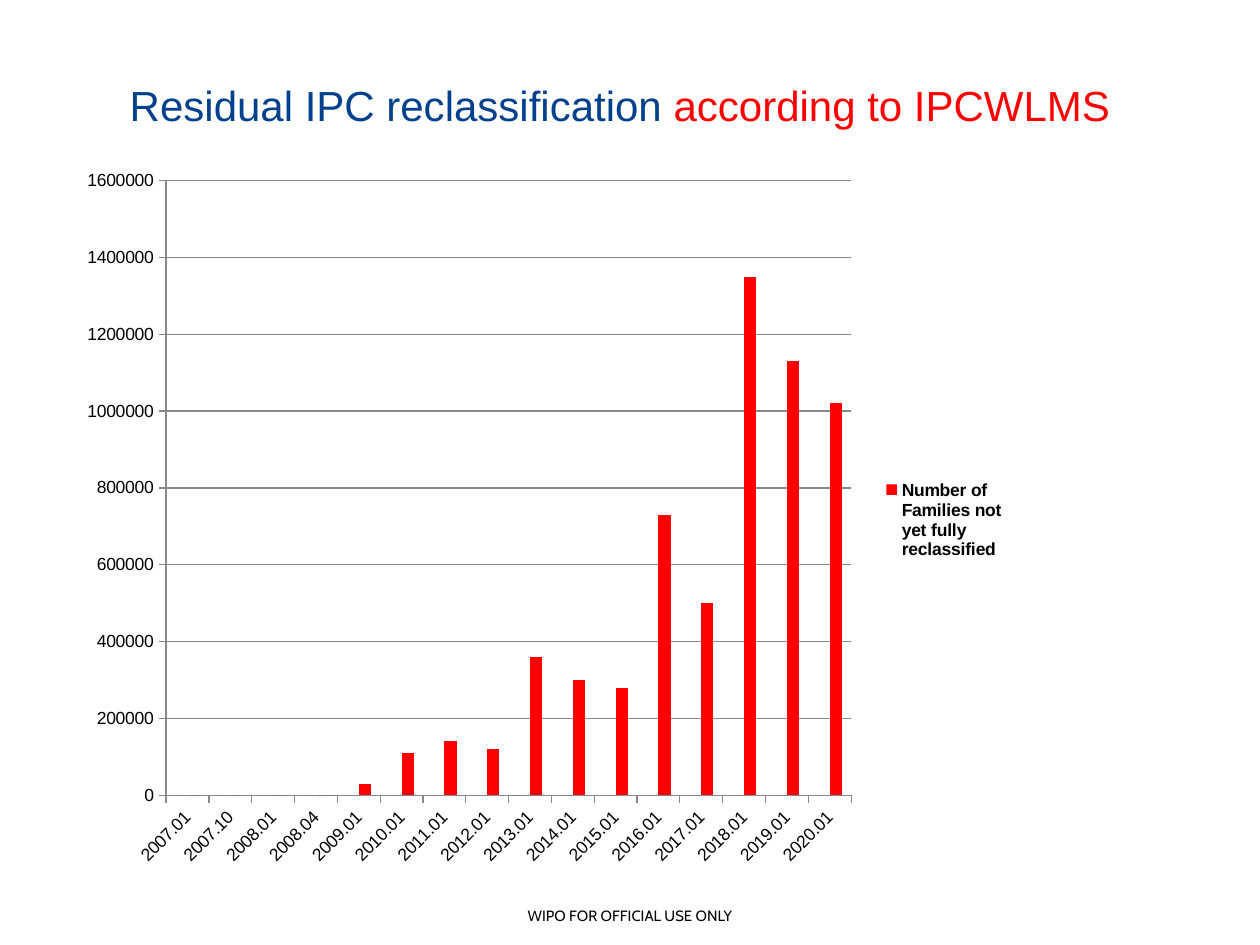
from typing import NamedTuple, Optional

from lxml import etree
from pptx import Presentation
from pptx.chart.data import CategoryChartData
from pptx.dml.color import RGBColor
from pptx.enum import chart as ch, text as t
from pptx.oxml.ns import qn
from pptx.util import Inches, Pt

GREY, BLACK, RED, BLUE = "888888", "000000", "FF0000", "00408C"


class Series(NamedTuple):
    name: str
    values: list[Optional[int]]
    color: str


EDITIONS = ["2007.01", "2007.10", "2008.01", "2008.04"] + [f"{y}.01" for y in range(2009, 2021)]
SERIES = [
    Series("Series 1", [0] * 15 + [None], "48A8B0"),
    Series("Number of Families not yet fully reclassified",
           [0, 0, 0, 0, 30000, 110000, 140000, 120000, 360000, 300000, 280000,
            730000, 500000, 1350000, 1130000, 1020000], RED),
]


def rgb(value: str) -> RGBColor:
    return RGBColor.from_string(value)


def set_font(font, color: str = BLACK, **values) -> None:
    for name, value in values.items():
        setattr(font, name, value)
    font.color.rgb = rgb(color)


def set_line(line) -> None:
    line.color.rgb = rgb(GREY)
    line.width = Pt(0.75)


def place(sp, left: float, top: float, width: float, height: float) -> None:
    sp.left, sp.top, sp.width, sp.height = map(Inches, (left, top, width, height))


def manual_layout(inner: bool, **box: float):
    """Return a c:layout element; box holds x, y, w, h as fractions of the chart."""
    layout = etree.Element(qn("c:layout"))
    manual = etree.SubElement(layout, qn("c:manualLayout"))
    modes = {"layoutTarget": "inner"} if inner else {}
    modes |= {"xMode": "edge", "yMode": "edge"}
    for tag, value in (modes | box).items():
        etree.SubElement(manual, qn(f"c:{tag}")).set("val", str(value))
    return layout


def add_title(slide) -> None:
    sp = slide.shapes.title
    place(sp, 0.42, 0.21, 9, 1.25)
    tf = sp.text_frame
    tf.vertical_anchor = t.MSO_ANCHOR.MIDDLE
    p = tf.paragraphs[0]
    p.alignment = t.PP_ALIGN.CENTER
    for words, color in (("Residual IPC reclassification ", BLUE), ("according to IPCWLMS", RED)):
        r = p.add_run()
        r.text = words
        set_font(r.font, color, name="Arial", size=Pt(24))


def add_footer(slide) -> None:
    sp = slide.shapes.add_textbox(*map(Inches, (0, 7.15, 10, 0.24)))
    tf = sp.text_frame
    tf.word_wrap = True
    p = tf.paragraphs[0]
    p.alignment = t.PP_ALIGN.CENTER
    r = p.add_run()
    r.text = "WIPO FOR OFFICIAL USE ONLY"
    set_font(r.font, name="Cabin", size=Pt(8.5))


def format_legend(chart) -> None:
    chart.has_legend = True
    legend = chart.legend
    legend.position = ch.XL_LEGEND_POSITION.RIGHT
    legend.include_in_layout = False
    set_font(legend.font, name="Arial", size=Pt(10), bold=True)
    root = chart.element.find(f".//{qn('c:legend')}")
    for old in root.findall(qn("c:layout")):
        root.remove(old)
    entry = etree.Element(qn("c:legendEntry"))
    for tag, value in (("idx", "0"), ("delete", "1")):
        etree.SubElement(entry, qn(f"c:{tag}")).set("val", value)
    position = root.find(qn("c:legendPos"))
    position.addnext(entry)
    entry.addnext(manual_layout(False, x=0.844, y=0.43, w=0.15, h=0.14))


def add_chart(slide) -> None:
    data = CategoryChartData()
    data.categories = EDITIONS
    for s in SERIES:
        data.add_series(s.name, s.values)
    chart = slide.shapes.add_chart(ch.XL_CHART_TYPE.COLUMN_CLUSTERED,
                                   *map(Inches, (0.59, 1.31, 7.51, 5.64)), data).chart
    chart.has_title = False
    set_font(chart.font, name="Arial", size=Pt(10))

    plot = chart.plots[0]
    plot.gap_width, plot.overlap, plot.vary_by_categories = 150, 0, False
    for series, s in zip(plot.series, SERIES):
        series.format.fill.solid()
        series.format.fill.fore_color.rgb = rgb(s.color)

    for axis in (chart.category_axis, chart.value_axis):
        axis.major_tick_mark = ch.XL_TICK_MARK.OUTSIDE
        set_font(axis.tick_labels.font, name="Arial", size=Pt(10))
        set_line(axis.format.line)
    labels = chart.element.find(f".//{qn('c:catAx')}/{qn('c:txPr')}/{qn('a:bodyPr')}")
    labels.set("rot", "-2700000")

    values = chart.value_axis
    values.minimum_scale, values.maximum_scale, values.major_unit = 0, 1600000, 200000
    values.tick_labels.number_format = "0"
    values.tick_labels.number_format_is_linked = False
    values.has_major_gridlines = True
    set_line(values.major_gridlines.format.line)

    area = chart.element.find(f".//{qn('c:plotArea')}")
    for old in area.findall(qn("c:layout")):
        area.remove(old)
    area.insert(0, manual_layout(True, x=0.097, y=0.022, w=0.724, h=0.865))
    format_legend(chart)


def main() -> None:
    prs = Presentation()
    prs.slide_width, prs.slide_height = Inches(10), Inches(7.5)
    slide = prs.slides.add_slide(prs.slide_layouts.get_by_name("Title Only"))
    add_footer(slide)
    add_title(slide)
    add_chart(slide)
    prs.save("out.pptx")


if __name__ == "__main__":
    main()
